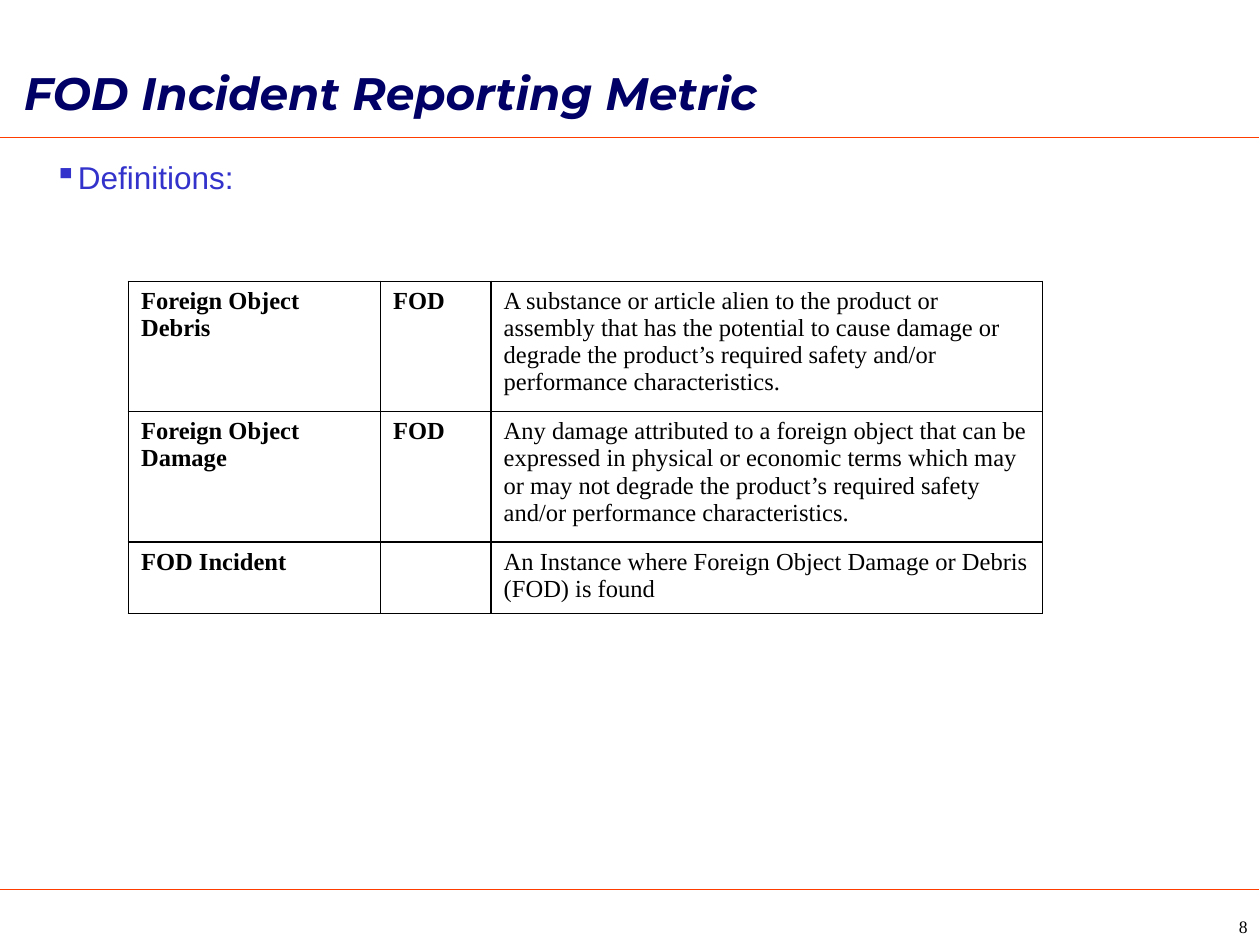
"""Build the slide that defines the FOD incident reporting terms."""
from lxml.etree import SubElement
from pptx import Presentation
from pptx.dml.color import RGBColor
from pptx.enum.shapes import MSO_CONNECTOR
from pptx.enum.text import MSO_ANCHOR, PP_ALIGN
from pptx.oxml import parse_xml
from pptx.oxml.ns import nsdecls, qn
from pptx.util import Cm, Pt


def tint(code):
    return RGBColor.from_string(code)


def style(para, face, size, code, bold=False, slant=False):
    for run in para.runs:
        font = run.font
        font.name, font.size = face, Pt(size)
        font.bold, font.italic = bold, slant
        font.color.rgb = tint(code)


deck = Presentation()
deck.slide_width, deck.slide_height = Cm(25.4), Cm(19.05)
slide = deck.slides.add_slide(deck.slide_layouts[6])
shapes = slide.shapes

for y in (2.77, 17.93):
    rule = shapes.add_connector(
        MSO_CONNECTOR.STRAIGHT, Cm(0), Cm(y), Cm(25.37), Cm(y))
    rule.line.color.rgb = tint("FF3D00")
    rule.line.width = Pt(1)
    SubElement(rule.element.spPr, qn("a:effectLst"))

page = shapes.add_textbox(Cm(19.48), Cm(18.34), Cm(5.92), Cm(0.71))
page.text_frame.word_wrap = True
para = page.text_frame.paragraphs[0]
para.text = "8"
para.alignment = PP_ALIGN.RIGHT
style(para, "Times New Roman", 10, "000000")

title = shapes.add_textbox(Cm(0.48), Cm(1.52), Cm(15.09), Cm(1.02))
frame = title.text_frame
frame.word_wrap = False
frame.vertical_anchor = MSO_ANCHOR.BOTTOM
frame.margin_left = Cm(0)
para = frame.paragraphs[0]
para.text = "FOD Incident Reporting Metric"
para.line_spacing = 0.85
style(para, "Montserrat", 26, "000066", bold=True, slant=True)

lead = shapes.add_textbox(Cm(0.84), Cm(3.07), Cm(23.5), Cm(1.02))
lead.text_frame.word_wrap = True
para = lead.text_frame.paragraphs[0]
para.text = "Definitions:"
style(para, "Arial", 18, "3333CC")
props = para._p.get_or_add_pPr()
props.set("marL", str(Cm(0.48)))
props.set("indent", str(-Cm(0.48)))
SubElement(props, qn("a:buChar"), char="▪")

terms = [
    ("Foreign Object Debris", "FOD",
     "A substance or article alien to the product or assembly that has the "
     "potential to cause damage or degrade the product’s required safety "
     "and/or performance characteristics."),
    ("Foreign Object Damage", "FOD",
     "Any damage attributed to a foreign object that can be expressed in "
     "physical or economic terms which may or may not degrade the product’s "
     "required safety and/or performance characteristics."),
    ("FOD Incident", "",
     "An Instance where Foreign Object Damage or Debris (FOD) is found"),
]
wide = (5.08, 2.23, 11.12)
high = (2.63, 2.63, 1.44)
grid = shapes.add_table(
    len(high), len(wide), Cm(2.59), Cm(5.67), Cm(sum(wide)), Cm(sum(high)))
table = grid.table
table.first_row = table.horz_banding = False
for col, width in zip(table.columns, wide):
    col.width = Cm(width)
for row, height, texts in zip(table.rows, high, terms):
    row.height = Cm(height)
    for i, (cell, text) in enumerate(zip(row.cells, texts)):
        para = cell.text_frame.paragraphs[0]
        para.text = text
        style(para, "Times New Roman", 14, "000000", bold=i < 2)
        props = cell._tc.get_or_add_tcPr()
        for side in "LRTB":
            props.append(parse_xml(
                f'<a:ln{side} {nsdecls("a")} w="{Pt(1)}"><a:solidFill>'
                f'<a:srgbClr val="000000"/></a:solidFill></a:ln{side}>'))
        cell.fill.background()

deck.save("out.pptx")
